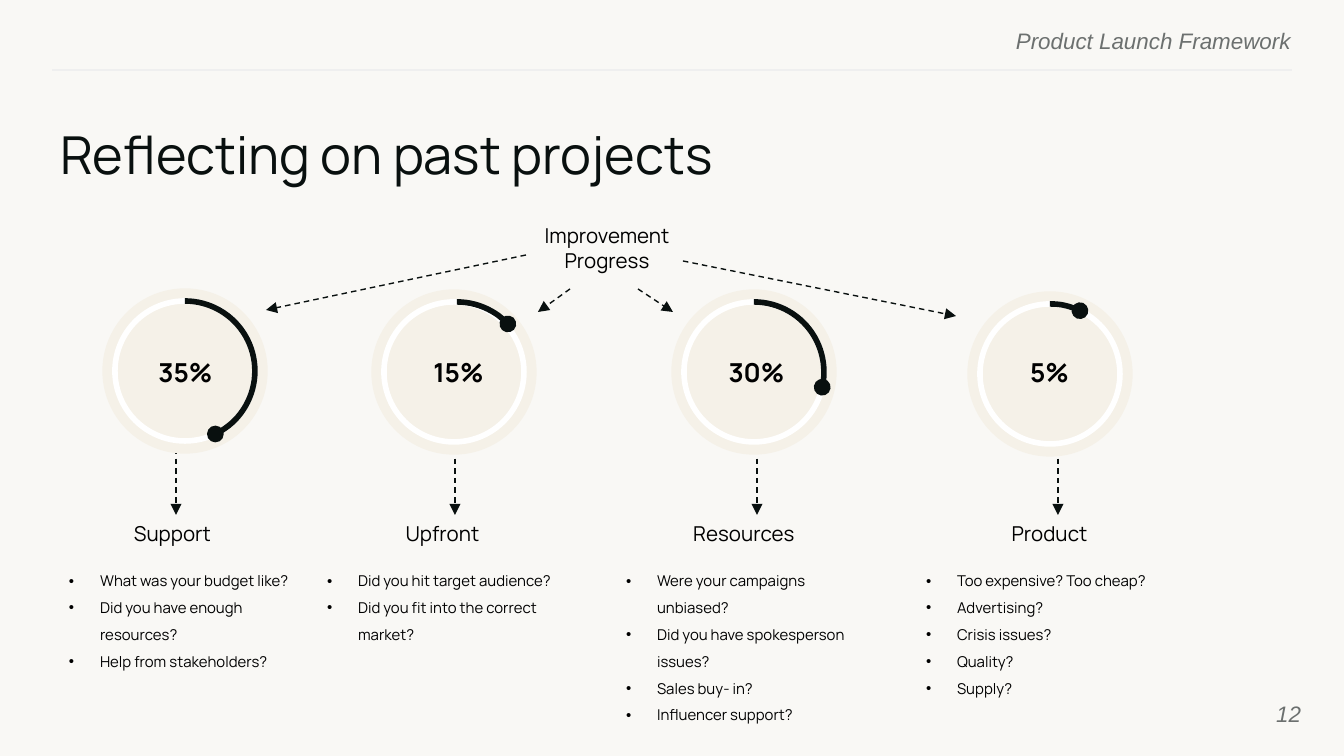
import pptx
import pptx.dml.color
import pptx.enum.dml
import pptx.enum.shapes
import pptx.enum.text
import pptx.oxml
import pptx.oxml.ns
import pptx.util
from dataclasses import dataclass

HEADER = "Product Launch Framework"
TITLE = "Reflecting on past projects"
HUB = "Improvement Progress"
PAGE = "12"

# ring: left, top; arc: shift, end angle; label, heading and list: left (and width)
COLUMNS = [
    dict(name="Support", pct="35%", ring=(103, 289), arc=(0, 64.2),
         label=145, arrow=176, heading=(124, 97), box=(56, 266),
         items=["What was your budget like?", "Did you have enough resources?",
                "Help from stakeholders?"]),
    dict(name="Upfront", pct="15%", ring=(372, 290), arc=(3, 316.7),
         label=418, arrow=455, heading=(399, 87), box=(314, 273),
         items=["Did you hit target audience?",
                "Did you fit into the correct market?"]),
    dict(name="Resources", pct="30%", ring=(672, 290), arc=(0, 12.6),
         label=716, arrow=757, heading=(664, 160), box=(613, 276),
         items=["Were your campaigns unbiased?",
                "Did you have spokesperson issues?", "Sales buy- in?",
                "Influencer support?"]),
    dict(name="Product", pct="5%", ring=(968, 292), arc=(0, 295.4),
         label=1009, arrow=1058, heading=(1001, 97), box=(913, 276),
         items=["Too expensive? Too cheap?", "Advertising?", "Crisis issues?",
                "Quality?", "Supply?"]),
]
BRANCHES = [(526, 255, 266, 310), (570, 289, 538, 312),
            (638, 289, 673, 312), (683, 261, 956, 316)]

RING, TRACK = 164, 140
INSET = (RING - TRACK) // 2


@dataclass(frozen=True)
class Theme:
    bg: str = "F9F8F5"
    ink: str = "09100F"
    text: str = "000000"
    muted: str = "6C706F"
    rule: str = "EFEFEF"
    ring: str = "F5F1E8"
    track: str = "FFFFFF"
    font: str = "Manrope"
    meta_font: str = "Arial"
    title: int = 28
    pct: int = 14
    meta: int = 12
    heading: int = 11
    body: int = 8
    thin: float = 0.75
    thick: int = 3


T = Theme()
ALIGN = pptx.enum.text.PP_ALIGN
ANCHOR = pptx.enum.text.MSO_ANCHOR
SHAPE = pptx.enum.shapes.MSO_SHAPE


def px(n):
    return pptx.util.Emu(round(n * 914400 / 134.4))


def rgb(code):
    return pptx.dml.color.RGBColor.from_string(code)


def xml_child(parent, tag, **attrs):
    child = pptx.oxml.parse_xml(
        f'<a:{tag} {pptx.oxml.ns.nsdecls("a")}/>')
    for key, value in attrs.items():
        child.set(key, value)
    parent.append(child)
    return child


def style_line(s, color, width, tail=None):
    s.line.color.rgb = rgb(color)
    s.line.width = pptx.util.Pt(width)
    if tail:
        xml_child(s.line._get_or_add_ln(), "tailEnd", type=tail)


def add_line(slide, x1, y1, x2, y2, color=T.ink, arrow=True):
    s = slide.shapes.add_connector(
        pptx.enum.shapes.MSO_CONNECTOR.STRAIGHT, px(x1), px(y1), px(x2), px(y2))
    if arrow:
        s.line.dash_style = pptx.enum.dml.MSO_LINE.DASH
    style_line(s, color, T.thin, "triangle" if arrow else None)
    xml_child(s._element.spPr, "effectLst")


def add_run(p, text, size, color=T.text, font=T.font, bold=False, italic=False):
    r = p.add_run()
    r.text = text
    r.font.size = pptx.util.Pt(size)
    r.font.name = font
    r.font.color.rgb = rgb(color)
    r.font.bold = bold
    r.font.italic = italic


def place(sp, x, y, w, h, anchor=ANCHOR.TOP, margins=(0, 0)):
    sp.left, sp.top, sp.width, sp.height = px(x), px(y), px(w), px(h)
    tf = sp.text_frame
    tf.word_wrap = True
    tf.auto_size = pptx.enum.text.MSO_AUTO_SIZE.NONE
    tf.vertical_anchor = anchor
    tf.margin_left = tf.margin_right = px(margins[0])
    tf.margin_top = tf.margin_bottom = px(margins[1])
    return tf


def add_label(slide, text, x, y, w, h, size, align=ALIGN.CENTER,
              anchor=ANCHOR.TOP, **font):
    tf = place(slide.shapes.add_textbox(0, 0, 0, 0), x, y, w, h, anchor)
    p = tf.paragraphs[0]
    p.alignment = align
    add_run(p, text, size, **font)


def add_round(shapes, kind, x, y, size):
    s = shapes.add_shape(kind, px(x), px(y), px(size), px(size))
    s.shadow.inherit = False
    return s


def add_gauge(slide, col):
    x, y = col["ring"]
    group = slide.shapes.add_group_shape()
    for inset, size, color, width in ((0, RING, T.ring, T.thin),
                                      (INSET, TRACK, T.track, T.thick)):
        s = add_round(group.shapes, SHAPE.OVAL, x + inset, y + inset, size)
        s.fill.solid()
        s.fill.fore_color.rgb = rgb(T.ring)
        style_line(s, color, width)
    shift, end = col["arc"]
    s = add_round(slide.shapes, SHAPE.ARC, x + INSET + shift, y + INSET, TRACK)
    s.fill.background()
    # Angles are stored in 1/60000 degree; adjustments are scaled by 1/100000
    for i, angle in enumerate((270, end)):
        s.adjustments[i] = angle * 0.6
    style_line(s, T.ink, T.thick, "oval")
    add_label(slide, col["pct"], col["label"], 348, 81, 48, T.pct,
              anchor=ANCHOR.MIDDLE, bold=True)


def fill_list(sp, col):
    x, w = col["box"]
    tf = place(sp, x, 556, w, 104, margins=(13, 7))
    for i, item in enumerate(col["items"]):
        p = tf.add_paragraph() if i else tf.paragraphs[0]
        p.alignment = ALIGN.LEFT
        p.line_spacing = 1.5
        p.space_before = p.space_after = pptx.util.Pt(0)
        pPr = p._p.get_or_add_pPr()
        pPr.set("marL", str(px(31)))
        pPr.set("indent", str(-px(31)))
        xml_child(xml_child(pPr, "buClr"), "srgbClr", val=T.text)
        xml_child(pPr, "buFont", typeface=T.meta_font)
        xml_child(pPr, "buChar", char="•")
        add_run(p, item, T.body)


def main():
    prs = pptx.Presentation()
    prs.slide_width, prs.slide_height = px(1344), px(756)
    # The Comparison layout has a title and four body placeholders
    slide = prs.slides.add_slide(prs.slide_layouts[4])
    slide.background.fill.solid()
    slide.background.fill.fore_color.rgb = rgb(T.bg)

    meta = dict(align=ALIGN.RIGHT, color=T.muted, font=T.meta_font, italic=True)
    add_label(slide, HEADER, 774, 27, 517, 24, T.meta, **meta)
    add_label(slide, PAGE, 1220, 685, 81, 58, T.meta,
              anchor=ANCHOR.MIDDLE, **meta)
    add_line(slide, 1292, 70, 52, 70, T.rule, arrow=False)

    p = place(slide.shapes.title, 60, 122, 1241, 69).paragraphs[0]
    p.alignment = ALIGN.LEFT
    p.space_after = pptx.util.Pt(10)
    add_run(p, TITLE, T.title, T.ink)

    add_label(slide, HUB, 515, 223, 184, 24, T.heading)
    for branch in BRANCHES:
        add_line(slide, *branch)

    bodies = list(slide.placeholders)[1:]
    for col, body in zip(COLUMNS, bodies):
        add_line(slide, col["arrow"], 449, col["arrow"], 515)
        add_gauge(slide, col)
        x, w = col["heading"]
        add_label(slide, col["name"], x, 521, w, 24, T.heading)
        fill_list(body, col)

    prs.save("out.pptx")


if __name__ == "__main__":
    main()
